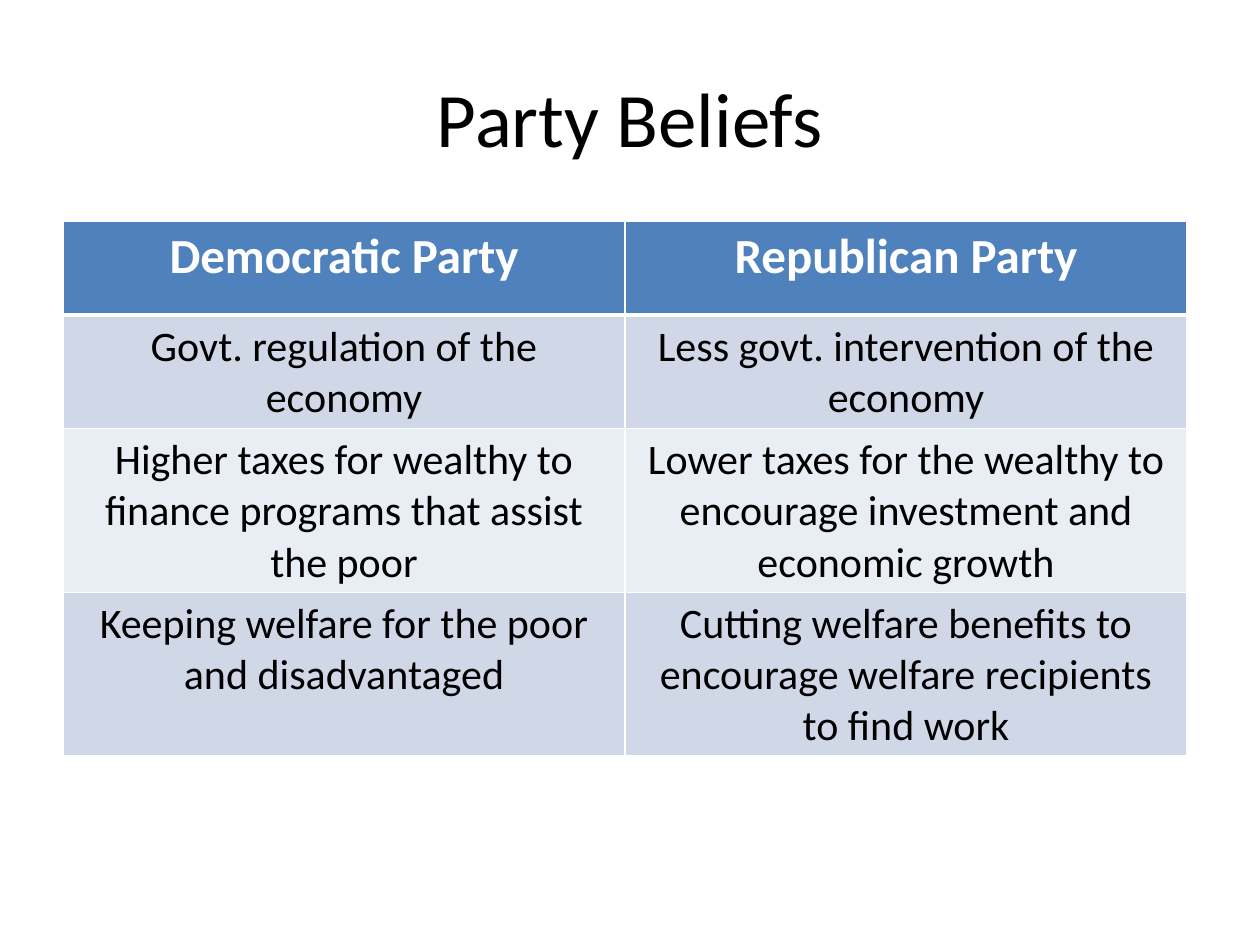
from dataclasses import dataclass

from lxml import etree
from pptx import Presentation
from pptx.dml.color import RGBColor
from pptx.enum.text import MSO_ANCHOR, PP_ALIGN
from pptx.oxml.ns import qn
from pptx.util import Pt

EMU_PER_PX = 914400 / 126
CENTER = PP_ALIGN.CENTER
MIDDLE = MSO_ANCHOR.MIDDLE


@dataclass(frozen=True)
class Theme:
    font: str = "Calibri"
    ink: str = "000000"
    white: str = "FFFFFF"
    header_fill: str = "4F81BD"
    bands: tuple = ("D0D8E8", "E9EDF4")
    title_size: int = 44
    header_size: int = 28
    body_size: int = 24
    rule: int = 1
    header_rule: int = 3


THEME = Theme()

BELIEFS = [
    ("Democratic Party", "Republican Party"),
    ("Govt. regulation of the economy", "Less govt. intervention of the economy"),
    ("Higher taxes for wealthy to finance programs that assist the poor",
     "Lower taxes for the wealthy to encourage investment and economic growth"),
    ("Keeping welfare for the poor and disadvantaged",
     "Cutting welfare benefits to encourage welfare recipients to find work"),
]
ROW_HEIGHTS = (94, 94, 163, 163)
COLUMN_WIDTH = 562


def px(length):
    return round(length * EMU_PER_PX)


def write_centered(frame, text, size, color, bold=False):
    paragraph = frame.paragraphs[0]
    paragraph.alignment = CENTER
    run = paragraph.add_run()
    run.text = text
    font_format = {"name": THEME.font, "size": Pt(size), "bold": bold}
    for attribute, value in font_format.items():
        setattr(run.font, attribute, value)
    run.font.color.rgb = RGBColor.from_string(color)


def add_title(slide, text):
    title = slide.shapes.add_textbox(px(63), px(38), px(1134), px(158))
    frame = title.text_frame
    frame.word_wrap = True
    frame.vertical_anchor = MIDDLE
    write_centered(frame, text, THEME.title_size, THEME.ink)


def set_borders(cell, widths):
    """Draw white cell borders; call before filling, as lines precede the fill."""
    properties = cell._tc.get_or_add_tcPr()
    for side, width in widths.items():
        line = etree.SubElement(properties, qn(f"a:ln{side}"), w=str(Pt(width)))
        fill = etree.SubElement(line, qn("a:solidFill"))
        etree.SubElement(fill, qn("a:srgbClr"), val=THEME.white)


def style_cell(cell, row):
    widths = dict.fromkeys("LRTB", THEME.rule)
    if row == 0:
        widths["B"] = THEME.header_rule
        color = THEME.header_fill
    else:
        if row == 1:
            widths["T"] = THEME.header_rule
        color = THEME.bands[(row - 1) % len(THEME.bands)]
    set_borders(cell, widths)
    cell.fill.solid()
    cell.fill.fore_color.rgb = RGBColor.from_string(color)


def add_beliefs_table(slide, beliefs):
    columns = len(beliefs[0])
    table = slide.shapes.add_table(
        len(beliefs), columns, px(63), px(221),
        px(COLUMN_WIDTH * columns), px(sum(ROW_HEIGHTS))).table
    for column in table.columns:
        column.width = px(COLUMN_WIDTH)
    for row, (height, texts) in enumerate(zip(ROW_HEIGHTS, beliefs)):
        table.rows[row].height = px(height)
        is_header = row == 0
        size = THEME.header_size if is_header else THEME.body_size
        color = THEME.white if is_header else THEME.ink
        for column, text in enumerate(texts):
            cell = table.cell(row, column)
            style_cell(cell, row)
            write_centered(cell.text_frame, text, size, color, is_header)


def main():
    deck = Presentation()
    deck.slide_width, deck.slide_height = px(1260), px(945)
    slide = deck.slides.add_slide(deck.slide_layouts[6])
    add_title(slide, "Party Beliefs")
    add_beliefs_table(slide, BELIEFS)
    deck.save("out.pptx")


if __name__ == "__main__":
    main()
